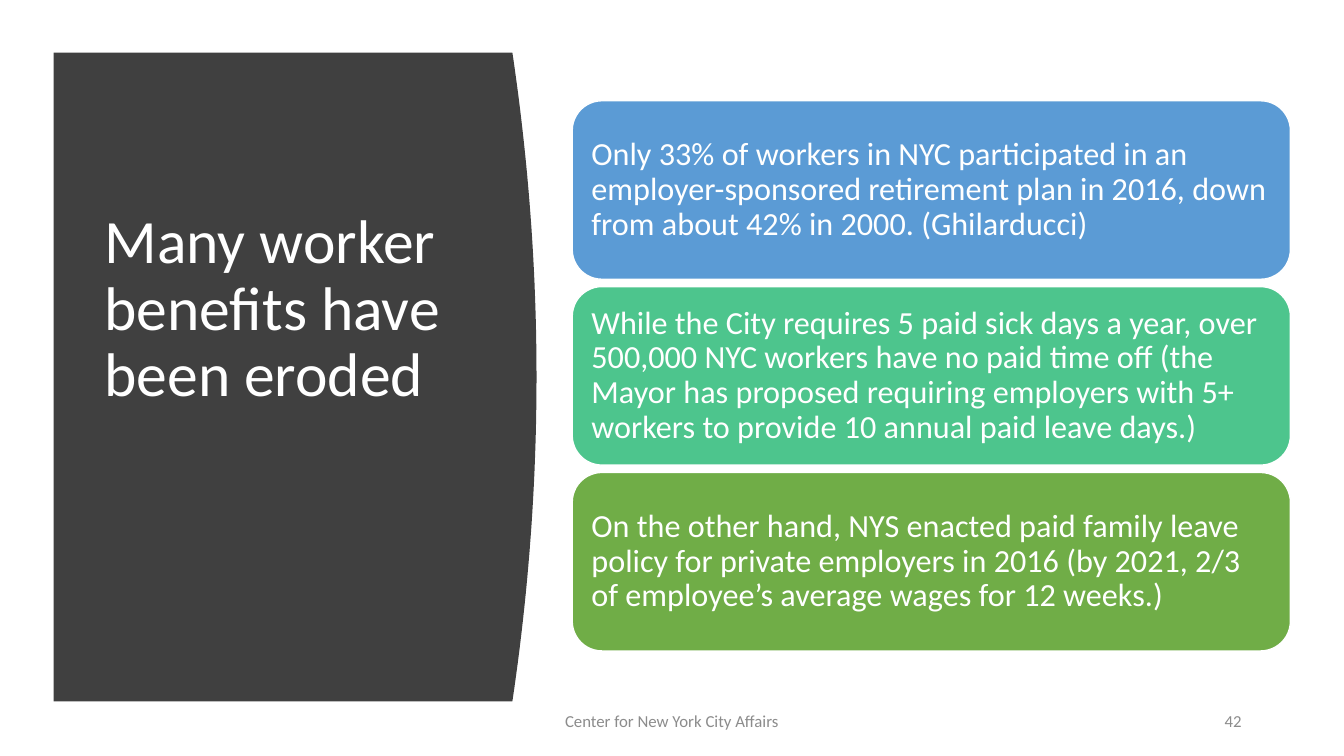
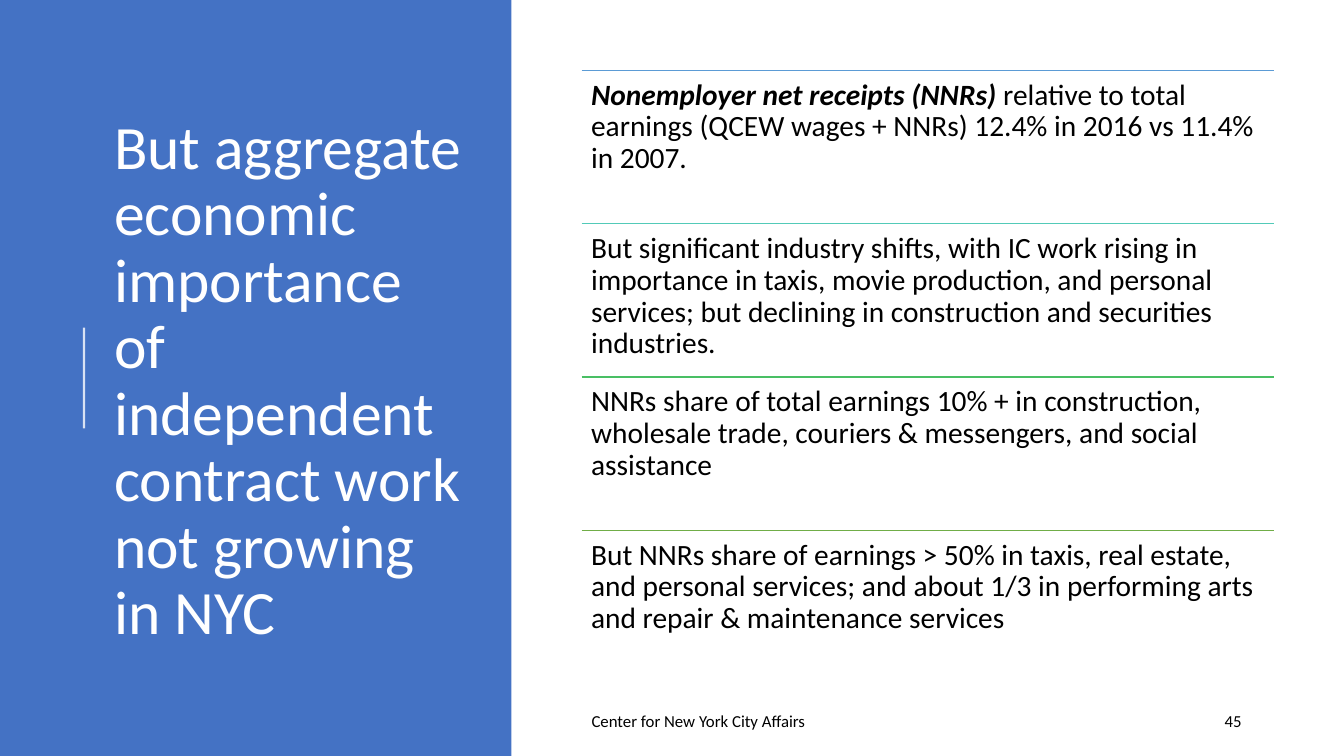
import lxml.etree
import pptx
import pptx.util
import pptx.dml.color
import pptx.enum.shapes
import pptx.enum.text
import pptx.oxml.ns

PX = 9525  # EMU per px, 96 px to the inch
SLIDE_W, SLIDE_H = 1280, 720
FONT = "Calibri"
FOOTER = "Center for New York City Affairs"
COLORS = {
    "white": "FFFFFF", "black": "000000", "grey": "8C8C8C", "charcoal": "404040",
    "navy": "4472C4", "blue": "5B9BD5", "teal": "52CAB8", "mint": "4DC58D",
    "emerald": "49BF64", "green": "70AD47",
}
ALIGN = pptx.enum.text.PP_ALIGN
ANCHOR = pptx.enum.text.MSO_ANCHOR
SHAPE = pptx.enum.shapes.MSO_SHAPE


def px(*values):
    return [pptx.util.Emu(v * PX) for v in values]


def rgb(name):
    return pptx.dml.color.RGBColor.from_string(COLORS[name])


def write(sp, text, size, color, align=ALIGN.LEFT, anchor=ANCHOR.MIDDLE,
          spacing=None, inset=None, lead=""):
    """Fill a shape with one paragraph, optionally opened by a bold italic lead."""
    tf = sp.text_frame
    tf.word_wrap = True
    tf.auto_size = pptx.enum.text.MSO_AUTO_SIZE.NONE
    tf.vertical_anchor = anchor
    if inset is not None:
        tf.margin_left, tf.margin_top, tf.margin_right, tf.margin_bottom = px(*[inset] * 4)
    p = tf.paragraphs[0]
    p.alignment = align
    if spacing:
        p.line_spacing = spacing
    for part, strong in ((lead, True), (text, False)):
        if part:
            r = p.add_run()
            r.text = part
            r.font.name = FONT
            r.font.size = pptx.util.Pt(size)
            r.font.bold = r.font.italic = strong
            r.font.color.rgb = rgb(color)


def add_text(slide, box, text, **fmt):
    sp = slide.shapes.add_textbox(*px(*box))
    write(sp, text, **fmt)


def paint(sp, fill, line=None):
    sp.shadow.inherit = False
    sp.fill.solid()
    sp.fill.fore_color.rgb = rgb(fill)
    if line:
        sp.line.color.rgb = rgb(line)
        sp.line.width = pptx.util.Pt(1)
    else:
        sp.line.fill.background()


def add_box(slide, kind, box, fill, line=None):
    sp = slide.shapes.add_shape(kind, *px(*box))
    paint(sp, fill, line)
    return sp


def add_line(slide, start, end, color, width=1, opacity=100):
    cx = slide.shapes.add_connector(
        pptx.enum.shapes.MSO_CONNECTOR.STRAIGHT, *px(*start, *end))
    cx.line.color.rgb = rgb(color)
    cx.line.width = pptx.util.Pt(width)
    sp_pr = cx._element.spPr
    qn = pptx.oxml.ns.qn
    if opacity < 100:
        clr = sp_pr.find(".//" + qn("a:srgbClr"))
        lxml.etree.SubElement(clr, qn("a:alpha"), val=str(opacity * 1000))
    lxml.etree.SubElement(sp_pr, qn("a:effectLst"))


def add_curved_panel(slide, box, bulge, fill, steps=48):
    """Panel whose right side bows outward by bulge px."""
    x, y, w, h = box
    points = []
    for i in range(steps + 1):
        t = 2 * i / steps - 1
        points.append((round((x + w - bulge * t * t) * PX), round((y + h * i / steps) * PX)))
    builder = slide.shapes.build_freeform(x * PX, y * PX)
    builder.add_line_segments(points + [(x * PX, (y + h) * PX)], close=True)
    paint(builder.convert_to_shape(), fill)


def set_title(slide, box, text):
    sp = slide.shapes.title
    sp.left, sp.top, sp.width, sp.height = px(*box)
    write(sp, text, size=44, color="white", spacing=0.9)
    # Bring the title in front of the panel drawn before it
    slide.shapes._spTree.append(sp._element)


def add_footer(slide, box, number, color, align):
    add_text(slide, box, FOOTER, size=12, color=color, align=align)
    add_text(slide, (904, 667, 288, 38), number, size=12, color=color, align=ALIGN.RIGHT)


def add_cards(slide, box, gap, cards):
    x, y, w, h = box
    card_h = (h - gap * (len(cards) - 1)) // len(cards)
    for i, (color, text) in enumerate(cards):
        sp = add_box(slide, SHAPE.ROUNDED_RECTANGLE,
                     (x, y + i * (card_h + gap), w, card_h), color, "white")
        write(sp, text, size=23, color="white", spacing=0.9, inset=10)


def add_ruled_rows(slide, box, rows):
    x, y, w, h = box
    row_h = h // len(rows)
    for i, (color, lead, text) in enumerate(rows):
        top = y + i * row_h
        add_line(slide, (x, top), (x + w, top), color)
        add_text(slide, (x, top, w, row_h), text, lead=lead, size=21, color="black",
                 anchor=ANCHOR.TOP, spacing=0.9, inset=9)


def benefits_slide(slide):
    add_curved_panel(slide, (51, 50, 460, 618), 23, "charcoal")
    set_title(slide, (90, 107, 359, 377), "Many worker benefits have been eroded")
    add_cards(slide, (545, 96, 684, 524), 7, [
        ("blue", "Only 33% of workers in NYC participated in an employer-sponsored "
                 "retirement plan in 2016, down from about 42% in 2000. (Ghilarducci)"),
        ("mint", "While the City requires 5 paid sick days a year, over 500,000 NYC "
                 "workers have no paid time off (the Mayor has proposed requiring "
                 "employers with 5+ workers to provide 10 annual paid leave days.)"),
        ("green", "On the other hand, NYS enacted paid family leave policy for private "
                  "employers in 2016 (by 2021, 2/3 of employee’s average wages for "
                  "12 weeks.)"),
    ])
    add_footer(slide, (424, 667, 432, 38), "42", "grey", ALIGN.CENTER)


def contract_work_slide(slide):
    add_box(slide, SHAPE.RECTANGLE, (0, 0, 487, SLIDE_H), "navy")
    set_title(slide, (99, 75, 354, 578),
              "But aggregate economic importance of independent contract work "
              "not growing in NYC")
    add_line(slide, (80, 408), (80, 312), "white", width=1.5, opacity=80)
    add_ruled_rows(slide, (554, 67, 659, 584), [
        ("blue", "Nonemployer net receipts (NNRs) ",
         "relative to total earnings (QCEW wages + NNRs) 12.4% in 2016 vs 11.4% in 2007."),
        ("teal", "",
         "But significant industry shifts, with IC work rising in importance in taxis, "
         "movie production, and personal services; but declining in construction and "
         "securities industries."),
        ("emerald", "",
         "NNRs share of total earnings 10% + in construction, wholesale trade, couriers "
         "& messengers, and social assistance"),
        ("green", "",
         "But NNRs share of earnings > 50% in taxis, real estate, and personal services; "
         "and about 1/3 in performing arts and repair & maintenance services"),
    ])
    add_footer(slide, (554, 667, 301, 38), "45", "black", ALIGN.LEFT)


def main():
    prs = pptx.Presentation()
    prs.slide_width, prs.slide_height = px(SLIDE_W, SLIDE_H)
    title_only = prs.slide_layouts[5]
    for build in (benefits_slide, contract_work_slide):
        build(prs.slides.add_slide(title_only))
    prs.save("out.pptx")


if __name__ == "__main__":
    main()
